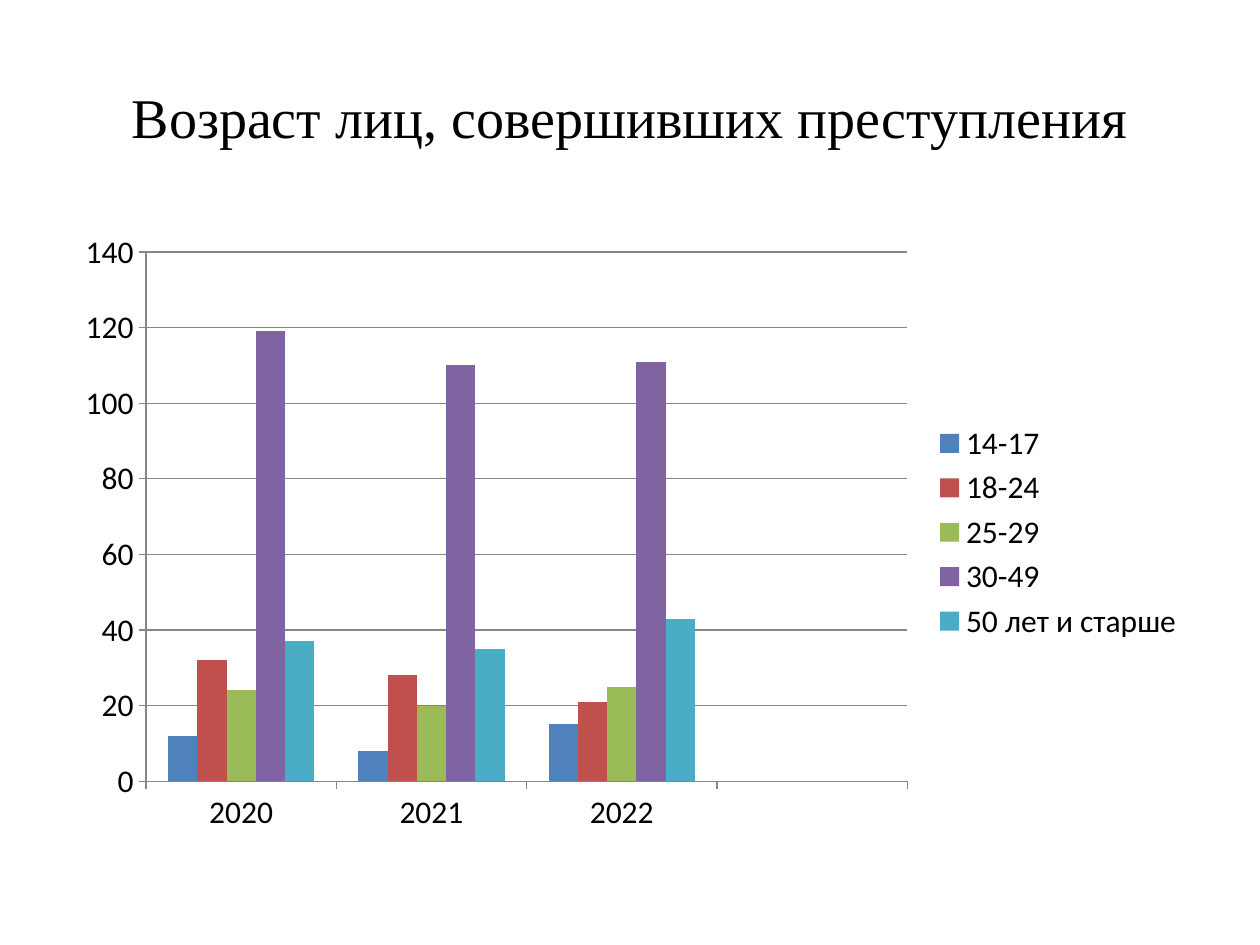
from pptx import Presentation
from pptx.chart.data import CategoryChartData
from pptx.dml.color import RGBColor
from pptx.enum.chart import XL_CHART_TYPE, XL_LEGEND_POSITION, XL_TICK_MARK
from pptx.enum.text import MSO_ANCHOR, PP_ALIGN
from pptx.util import Pt

COLORS = {
    "text": "000000",
    "axis": "868686",
    "14-17": "4F81BD",
    "18-24": "C0504D",
    "25-29": "9BBB59",
    "30-49": "8064A2",
    "50 лет и старше": "4BACC6",
}
YEARS = ["2020", "2021", "2022", ""]
OFFENDERS_BY_AGE = {
    "14-17": [12, 8, 15, None],
    "18-24": [32, 28, 21, None],
    "25-29": [24, 20, 25, None],
    "30-49": [119, 110, 111, None],
    "50 лет и старше": [37, 35, 43, None],
}


def color(name):
    return RGBColor.from_string(COLORS[name])


def style_font(font, name, size):
    font.name = name
    font.size = Pt(size)
    font.color.rgb = color("text")


def add_text(slide, text, box, font="Calibri", size=18, align=PP_ALIGN.LEFT,
             anchor=MSO_ANCHOR.TOP):
    shape = slide.shapes.add_textbox(*(Pt(length) for length in box))
    frame = shape.text_frame
    frame.word_wrap = True
    frame.vertical_anchor = anchor
    paragraph = frame.paragraphs[0]
    paragraph.alignment = align
    run = paragraph.add_run()
    run.text = text
    style_font(run.font, font, size)


def style_axis(axis):
    axis.major_tick_mark = XL_TICK_MARK.OUTSIDE
    axis.minor_tick_mark = XL_TICK_MARK.NONE
    axis.format.line.color.rgb = color("axis")
    axis.format.line.width = Pt(0.75)


def add_age_chart(slide, box):
    data = CategoryChartData()
    data.categories = YEARS
    for age, counts in OFFENDERS_BY_AGE.items():
        data.add_series(age, counts)
    chart = slide.shapes.add_chart(
        XL_CHART_TYPE.COLUMN_CLUSTERED, *(Pt(length) for length in box), data
    ).chart
    chart.has_title = False
    style_font(chart.font, "Calibri", 18)

    plot = chart.plots[0]
    plot.gap_width = 150
    plot.overlap = 0
    plot.vary_by_categories = False
    for series in plot.series:
        series.format.fill.solid()
        series.format.fill.fore_color.rgb = color(series.name)

    style_axis(chart.category_axis)
    style_axis(chart.value_axis)
    chart.value_axis.minimum_scale = 0
    chart.value_axis.maximum_scale = 140
    chart.value_axis.major_unit = 20
    gridline = chart.value_axis.major_gridlines.format.line
    gridline.color.rgb = color("axis")
    gridline.width = Pt(0.75)

    chart.has_legend = True
    chart.legend.position = XL_LEGEND_POSITION.RIGHT
    chart.legend.include_in_layout = False


def main():
    presentation = Presentation()
    presentation.slide_width = Pt(720)
    presentation.slide_height = Pt(540)
    slide = presentation.slides.add_slide(presentation.slide_layouts[6])
    add_text(slide, "Возраст лиц, совершивших преступления", (36, 21.6, 648, 90),
             font="Times New Roman", size=32, align=PP_ALIGN.CENTER,
             anchor=MSO_ANCHOR.MIDDLE)
    add_age_chart(slide, (36, 126, 648, 356.4))
    presentation.save("out.pptx")


if __name__ == "__main__":
    main()
